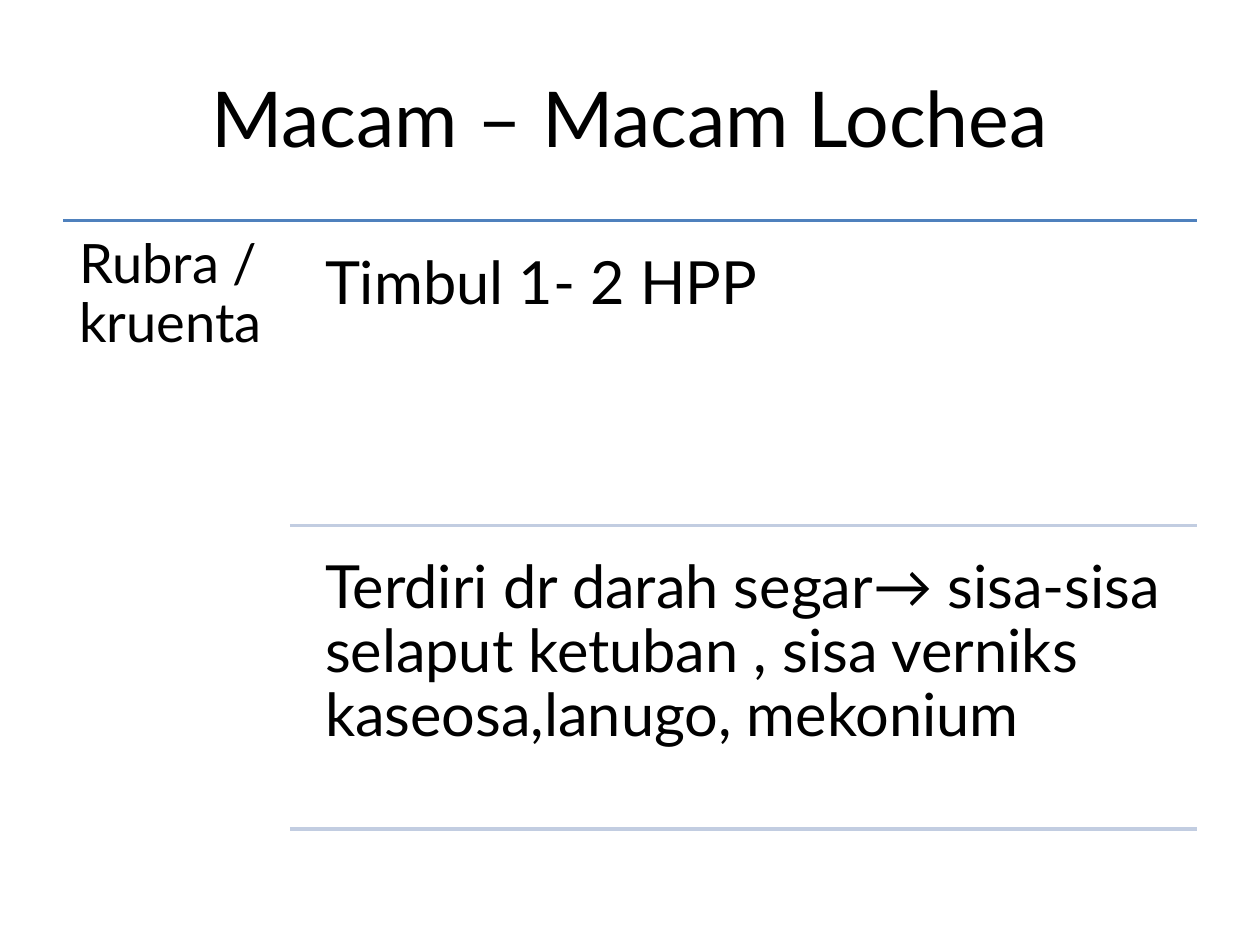
import pptx
import pptx.util
import pptx.dml.color
import pptx.enum.shapes
import pptx.enum.text
import pptx.oxml
import pptx.oxml.ns
from pptx.util import Inches

COLORS = {"text": "000000", "top_rule": "4F81BD", "row_rule": "C2CDE1"}

prs = pptx.Presentation()
prs.slide_width, prs.slide_height = Inches(10), Inches(7.5)
s = prs.slides.add_slide(prs.slide_layouts[6])


def add_text(text, left, top, width, height, size, inset=0.1, spacing=0.9,
             align=pptx.enum.text.PP_ALIGN.LEFT,
             anchor=pptx.enum.text.MSO_ANCHOR.TOP):
    sp = s.shapes.add_textbox(Inches(left), Inches(top), Inches(width), Inches(height))
    tf = sp.text_frame
    tf.word_wrap = True
    tf.vertical_anchor = anchor
    tf.margin_left = tf.margin_right = Inches(inset)
    tf.margin_top = tf.margin_bottom = Inches(inset)
    p = tf.paragraphs[0]
    p.alignment = align
    p.line_spacing = spacing
    r = p.add_run()
    r.text = text
    r.font.name = "Lato"
    r.font.size = pptx.util.Pt(size)
    r.font.color.rgb = pptx.dml.color.RGBColor.from_string(COLORS["text"])


def add_rule(left, y, color):
    line = s.shapes.add_connector(pptx.enum.shapes.MSO_CONNECTOR.STRAIGHT,
                                  Inches(left), Inches(y), Inches(9.5), Inches(y))
    line.line.width = pptx.util.Pt(2)
    line.line.color.rgb = pptx.dml.color.RGBColor.from_string(COLORS[color])
    pptx.oxml.ns.qn("a:effectLst")
    line._element.spPr.append(pptx.oxml.parse_xml(
        '<a:effectLst xmlns:a="http://schemas.openxmlformats.org/drawingml/2006/main"/>'))


# Title
add_text("Macam – Macam Lochea", 0.5, 0.3, 9, 1.25, 44, spacing=1.0,
         align=pptx.enum.text.PP_ALIGN.CENTER,
         anchor=pptx.enum.text.MSO_ANCHOR.MIDDLE)

# Category on the left, under the top rule
add_rule(0.5, 1.75, "top_rule")
add_text("Rubra /kruenta", 0.5, 1.75, 1.8, 4.95, 31, inset=0.13)

# Description rows, each closed by a rule
ROW_TOP, ROW_PITCH, ROW_HEIGHT = 1.87, 2.41, 2.3
descriptions = [
    "Timbul 1- 2 HPP",
    "Terdiri dr darah segar→ sisa-sisa selaput ketuban , sisa verniks "
    "kaseosa,lanugo, mekonium",
]
for i, text in enumerate(descriptions):
    top = ROW_TOP + i * ROW_PITCH
    add_text(text, 2.44, top, 7.07, ROW_HEIGHT, 34, inset=0.14)
    add_rule(2.3, top + ROW_HEIGHT, "row_rule")

prs.save("out.pptx")
